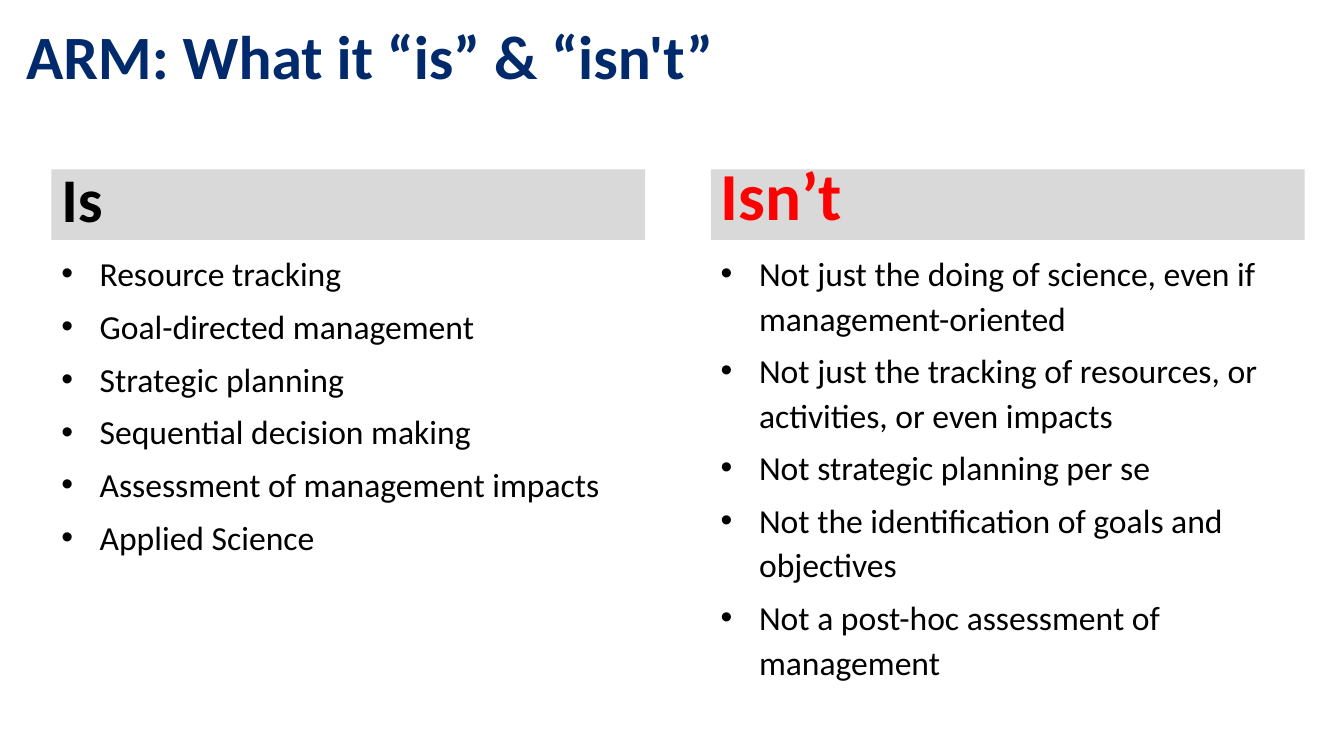
"""Build the slide that sets what ARM is beside what it isn't."""
from lxml.etree import SubElement
from pptx import Presentation
from pptx.dml.color import RGBColor
from pptx.enum.shapes import MSO_SHAPE as Shape
from pptx.enum.text import MSO_ANCHOR as Anchor, PP_ALIGN as Align
from pptx.oxml.ns import qn
from pptx.util import Inches, Pt

TITLE = "ARM: What it “is” & “isn't”"
COLUMNS = [
    {"heading": "Is", "size": 44.4, "color": "black", "spacing": 0.8, "points": [
        "Resource tracking",
        "Goal-directed management",
        "Strategic planning",
        "Sequential decision making",
        "Assessment of management impacts",
        "Applied Science",
    ]},
    {"heading": "Isn’t", "size": 48, "color": "red", "spacing": 0.9, "points": [
        "Not just the doing of science, even if management-oriented",
        "Not just the tracking of resources, or activities, or even impacts",
        "Not strategic planning per se",
        "Not the identification of goals and objectives",
        "Not a post-hoc assessment of management",
    ]},
]
COLORS = {"navy": "002A6C", "black": "000000", "red": "FF0000", "band": "D9D9D9"}
FONT = "Calibri"
WIDTH, HEIGHT = 13.33, 7.5
LEFT, COLUMN_WIDTH, GUTTER = 0.51, 5.89, 0.65
BAND_TOP, BAND_HEIGHT, LIST_HEIGHT = 1.68, 0.7, 4.97
INDENT = 0.38
POINT_GAP = 3


def rgb(name):
    return RGBColor.from_string(COLORS[name])


def write(paragraph, words, size, color, spacing, bold=False):
    paragraph.alignment = Align.LEFT
    paragraph.line_spacing = spacing
    run = paragraph.add_run()
    run.text = words
    run.font.name = FONT
    run.font.size = Pt(size)
    run.font.bold = bold
    run.font.color.rgb = rgb(color)


def add_bullet(paragraph):
    properties = paragraph._p.get_or_add_pPr()
    properties.set("marL", str(Inches(INDENT)))
    properties.set("indent", str(-Inches(INDENT)))
    SubElement(properties, qn("a:buFont"), typeface="Arial")
    SubElement(properties, qn("a:buChar"), char="•")


def add_text_frame(slide, left, top, width, height, anchor):
    box = slide.shapes.add_textbox(*map(Inches, (left, top, width, height)))
    frame = box.text_frame
    frame.word_wrap = True
    frame.vertical_anchor = anchor
    return frame


def add_heading(slide, column, left):
    band = slide.shapes.add_shape(
        Shape.RECTANGLE, *map(Inches, (left, BAND_TOP, COLUMN_WIDTH, BAND_HEIGHT)))
    band.shadow.inherit = False
    band.fill.solid()
    band.fill.fore_color.rgb = rgb("band")
    band.line.fill.background()
    band.text_frame.word_wrap = True
    band.text_frame.vertical_anchor = Anchor.BOTTOM
    write(band.text_frame.paragraphs[0], column["heading"], column["size"],
          column["color"], column["spacing"], bold=True)


def add_points(slide, points, left):
    frame = add_text_frame(slide, left, BAND_TOP + BAND_HEIGHT,
                           COLUMN_WIDTH, LIST_HEIGHT, Anchor.TOP)
    frame.margin_top = Inches(0.05) + Pt(POINT_GAP)
    for index, point in enumerate(points):
        paragraph = frame.add_paragraph() if index else frame.paragraphs[0]
        add_bullet(paragraph)
        paragraph.space_before = Pt(POINT_GAP if index else 0)
        paragraph.space_after = Pt(POINT_GAP)
        write(paragraph, point, 24, "black", 1.1)


def main():
    deck = Presentation()
    deck.slide_width, deck.slide_height = Inches(WIDTH), Inches(HEIGHT)
    slide = deck.slides.add_slide(deck.slide_layouts[6])
    for index, column in enumerate(COLUMNS):
        left = LEFT + index * (COLUMN_WIDTH + GUTTER)
        add_heading(slide, column, left)
        add_points(slide, column["points"], left)
    title = add_text_frame(slide, 0.16, 0, 12.99, 1.18, Anchor.MIDDLE)
    write(title.paragraphs[0], TITLE, 44, "navy", 0.9, bold=True)
    deck.save("out.pptx")


if __name__ == "__main__":
    main()
